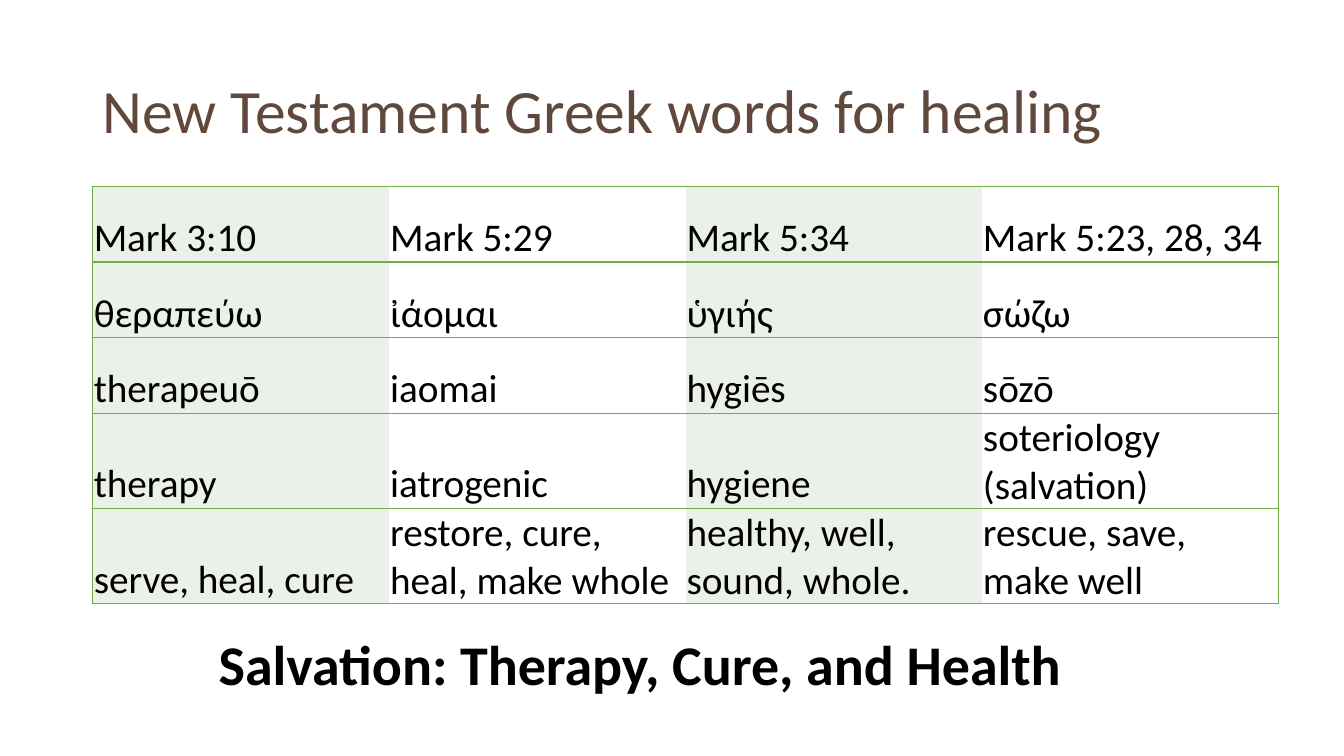
from pptx import Presentation
from pptx.dml.color import RGBColor as RGB
from pptx.enum.text import MSO_ANCHOR as Anchor
from pptx.oxml.ns import qn
from pptx.util import Inches, Pt
from lxml.etree import SubElement as Sub

TITLE = "New Testament Greek words for healing"
CLAIM = "Salvation: Therapy, Cure, and Health"
WORDS = [
    ("Mark 3:10", "Mark 5:29", "Mark 5:34", "Mark 5:23, 28, 34"),
    ("θεραπεύω", "ἰάομαι", "ὑγιής", "σώζω"),
    ("therapeuō", "iaomai", "hygiēs", "sōzō"),
    ("therapy", "iatrogenic", "hygiene", "soteriology (salvation)"),
    ("serve, heal, cure", "restore, cure, heal, make whole",
     "healthy, well, sound, whole.", "rescue, save, make well"),
]
COLORS = {"title": "60483C", "text": "000000", "line": "70AD47",
          "tint": "EBF1E9", "plain": "FFFFFF"}
FONT = "Calibri"
COL_W, ROW_H = 2.94, 0.75


def color(name):
    return RGB.from_string(COLORS[name])


def write(frame, text, size, tone="text", bold=False):
    run = frame.paragraphs[0].add_run()
    run.text = text
    font = run.font
    font.name, font.size, font.bold = FONT, Pt(size), bold
    font.color.rgb = color(tone)


def add_box(slide, left, top, width, height, wrap):
    box = slide.shapes.add_textbox(*map(Inches, (left, top, width, height)))
    box.text_frame.word_wrap = wrap
    return box.text_frame


def add_edge(cell, side, shown):
    line = Sub(cell._tc.get_or_add_tcPr(), qn(f"a:ln{side}"), w=str(Pt(1)))
    if shown:
        fill = Sub(line, qn("a:solidFill"))
        Sub(fill, qn("a:srgbClr"), val=COLORS["line"])
    else:
        Sub(line, qn("a:noFill"))


def add_words(slide):
    rows, cols = len(WORDS), len(WORDS[0])
    table = slide.shapes.add_table(
        rows, cols, Inches(0.92), Inches(1.85),
        Inches(COL_W * cols), Inches(ROW_H * rows)).table
    table.first_row = table.horz_banding = False
    for col in table.columns:
        col.width = Inches(COL_W)
    for r, words in enumerate(WORDS):
        table.rows[r].height = Inches(ROW_H)
        for c, word in enumerate(words):
            cell = table.cell(r, c)
            cell.vertical_anchor = Anchor.BOTTOM
            cell.margin_left = cell.margin_right = cell.margin_top = Inches(0.01)
            cell.margin_bottom = 0
            # Rules between rows, and only an outer frame at the sides
            edges = {"L": c == 0, "R": c == cols - 1, "T": True, "B": True}
            for side, shown in edges.items():
                add_edge(cell, side, shown)
            cell.fill.solid()
            cell.fill.fore_color.rgb = color("plain" if c % 2 else "tint")
            write(cell.text_frame, word, 28)


def main():
    deck = Presentation()
    deck.slide_width, deck.slide_height = Inches(13.33), Inches(7.5)
    slide = deck.slides.add_slide(deck.slide_layouts[6])

    # Title
    title = add_box(slide, 0.92, 0.4, 11.5, 1.45, True)
    title.vertical_anchor = Anchor.MIDDLE
    title.paragraphs[0].line_spacing = 0.9
    write(title, TITLE, 44, "title")

    # Word table
    add_words(slide)

    # Closing claim
    claim = add_box(slide, 2.07, 6.2, 8.65, 1.08, False)
    write(claim, CLAIM, 40, bold=True)

    deck.save("out.pptx")


if __name__ == "__main__":
    main()
